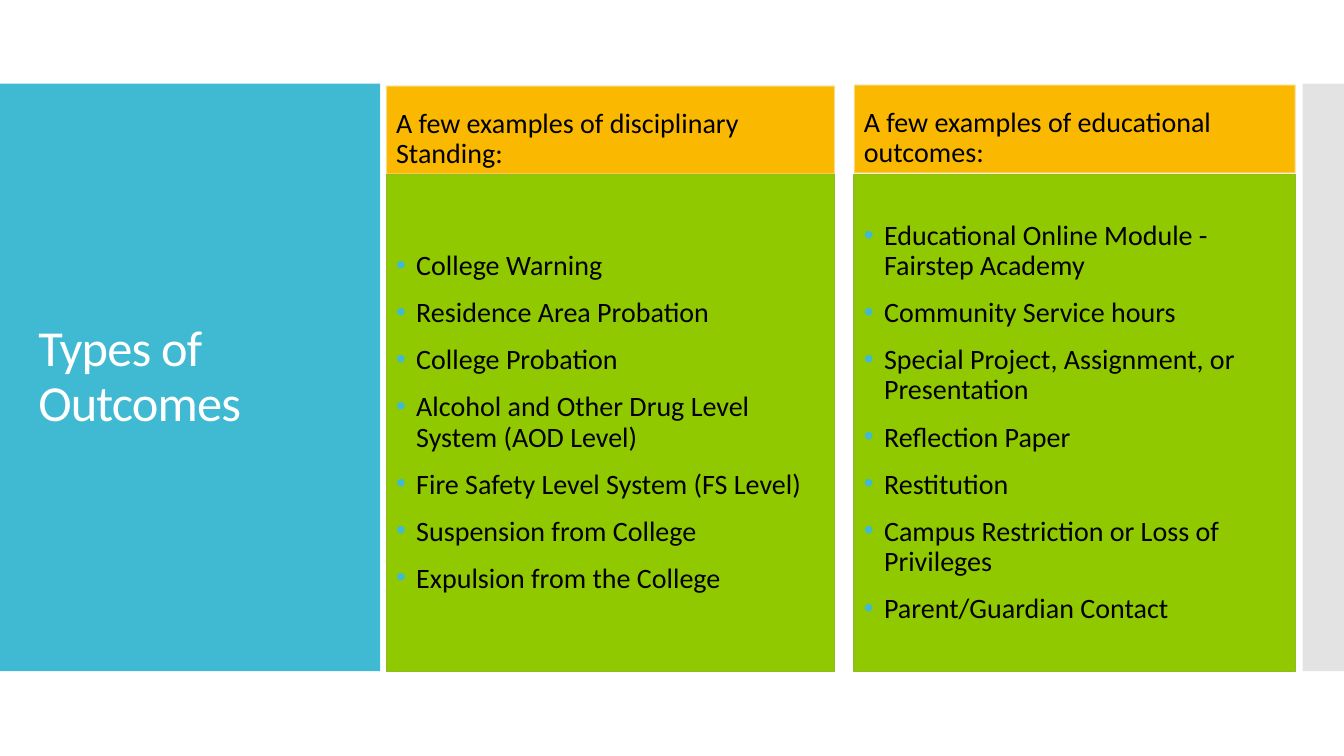
from lxml import etree
from pptx import Presentation
from pptx.dml.color import RGBColor
from pptx.enum.shapes import MSO_SHAPE
from pptx.enum.text import MSO_ANCHOR, MSO_AUTO_SIZE, PP_ALIGN
from pptx.oxml.ns import qn
from pptx.util import Inches, Pt

RECTANGLE = MSO_SHAPE.RECTANGLE
MIDDLE = MSO_ANCHOR.MIDDLE
BOTTOM = MSO_ANCHOR.BOTTOM
LEFT = PP_ALIGN.LEFT
NO_AUTOFIT = MSO_AUTO_SIZE.NONE
TITLE_ONLY = 5

FONT = "Calibri"
COLORS = {
    "teal": "40BAD2",
    "gray": "C8C8C8",
    "amber": "FAB900",
    "green": "90C900",
    "green_line": "90BB23",
    "pale_line": "F9F9F9",
    "white": "FFFFFF",
    "black": "000000",
}

BAND_TOP, BAND_HEIGHT = 0.83, 5.83
HEADING_HEIGHT = 0.88
LIST_TOP, LIST_HEIGHT = 1.73, 4.93

COLUMNS = [
    {
        "left": 3.83,
        "width": 4.45,
        "heading_top": 0.85,
        "heading": "A few examples of disciplinary Standing:",
        "items": [
            "College Warning",
            "Residence Area Probation",
            "College Probation",
            "Alcohol and Other Drug Level System (AOD Level)",
            "Fire Safety Level System (FS Level)",
            "Suspension from College",
            "Expulsion from the College",
        ],
    },
    {
        "left": 8.47,
        "width": 4.38,
        "heading_top": 0.84,
        "heading": "A few examples of educational outcomes:",
        "items": [
            "Educational Online Module - Fairstep Academy",
            "Community Service hours",
            "Special Project, Assignment, or Presentation",
            "Reflection Paper",
            "Restitution",
            "Campus Restriction or Loss of Privileges",
            "Parent/Guardian Contact",
        ],
    },
]


def rgb(name):
    return RGBColor.from_string(COLORS[name])


def set_opacity(fill_parent, percent):
    color = fill_parent.find(qn("a:solidFill"))[0]
    etree.SubElement(color, qn("a:alpha")).set("val", str(percent * 1000))


def add_bullet(paragraph, color):
    properties = paragraph._p.get_or_add_pPr()
    properties.set("marL", str(Inches(0.2)))
    properties.set("indent", str(Inches(-0.2)))
    bullet_color = etree.SubElement(properties, qn("a:buClr"))
    etree.SubElement(bullet_color, qn("a:srgbClr")).set("val", COLORS[color])
    etree.SubElement(properties, qn("a:buFont")).set("typeface", "Arial")
    etree.SubElement(properties, qn("a:buChar")).set("char", "•")


def write_text(shape, lines, size=20, color="black", anchor=MIDDLE,
               space_before=0, bullet_color=None, tracking=None):
    frame = shape.text_frame
    frame.word_wrap = True
    frame.auto_size = NO_AUTOFIT
    frame.vertical_anchor = anchor
    for index, line in enumerate(lines):
        paragraph = frame.add_paragraph() if index else frame.paragraphs[0]
        paragraph.alignment = LEFT
        paragraph.line_spacing = 0.9
        paragraph.space_before = Pt(space_before)
        if bullet_color:
            add_bullet(paragraph, bullet_color)
        run = paragraph.add_run()
        run.text = line
        run.font.name = FONT
        run.font.size = Pt(size)
        run.font.color.rgb = rgb(color)
        if tracking is not None:
            run.font._element.set("spc", str(round(tracking * 100)))


def add_panel(slide, left, top, width, height, fill, line=None,
              line_width=0.75, fill_opacity=None, line_opacity=None):
    shape = slide.shapes.add_shape(
        RECTANGLE, Inches(left), Inches(top), Inches(width), Inches(height))
    shape.shadow.inherit = False
    shape.fill.solid()
    shape.fill.fore_color.rgb = rgb(fill)
    if fill_opacity:
        set_opacity(shape._element.spPr, fill_opacity)
    if line:
        shape.line.color.rgb = rgb(line)
        shape.line.width = Pt(line_width)
        if line_opacity:
            set_opacity(shape._element.spPr.find(qn("a:ln")), line_opacity)
    else:
        shape.line.fill.background()
    return shape


def place_title(slide, text):
    title = slide.shapes.title
    title.left, title.top = Inches(0.28), Inches(1.23)
    title.width, title.height = Inches(3.22), Inches(5.03)
    write_text(title, [text], size=36, color="white", tracking=-0.6)
    title._element.getparent().append(title._element)


def add_column(slide, left, width, heading_top, heading, items):
    heading_panel = add_panel(
        slide, left, heading_top, width, HEADING_HEIGHT, "amber",
        line="pale_line", line_width=1.35, line_opacity=50)
    write_text(heading_panel, [heading], anchor=BOTTOM)
    list_panel = add_panel(
        slide, left, LIST_TOP, width, LIST_HEIGHT, "green", line="green_line")
    write_text(list_panel, items, space_before=12, bullet_color="teal")


def main():
    presentation = Presentation()
    presentation.slide_width = Inches(13.33)
    presentation.slide_height = Inches(7.5)
    slide = presentation.slides.add_slide(presentation.slide_layouts[TITLE_ONLY])
    add_panel(slide, 0, BAND_TOP, 3.77, BAND_HEIGHT, "teal")
    add_panel(slide, 12.92, BAND_TOP, 0.41, BAND_HEIGHT, "gray", fill_opacity=50)
    place_title(slide, "Types of Outcomes")
    for column in COLUMNS:
        add_column(slide, **column)
    presentation.save("out.pptx")


if __name__ == "__main__":
    main()
